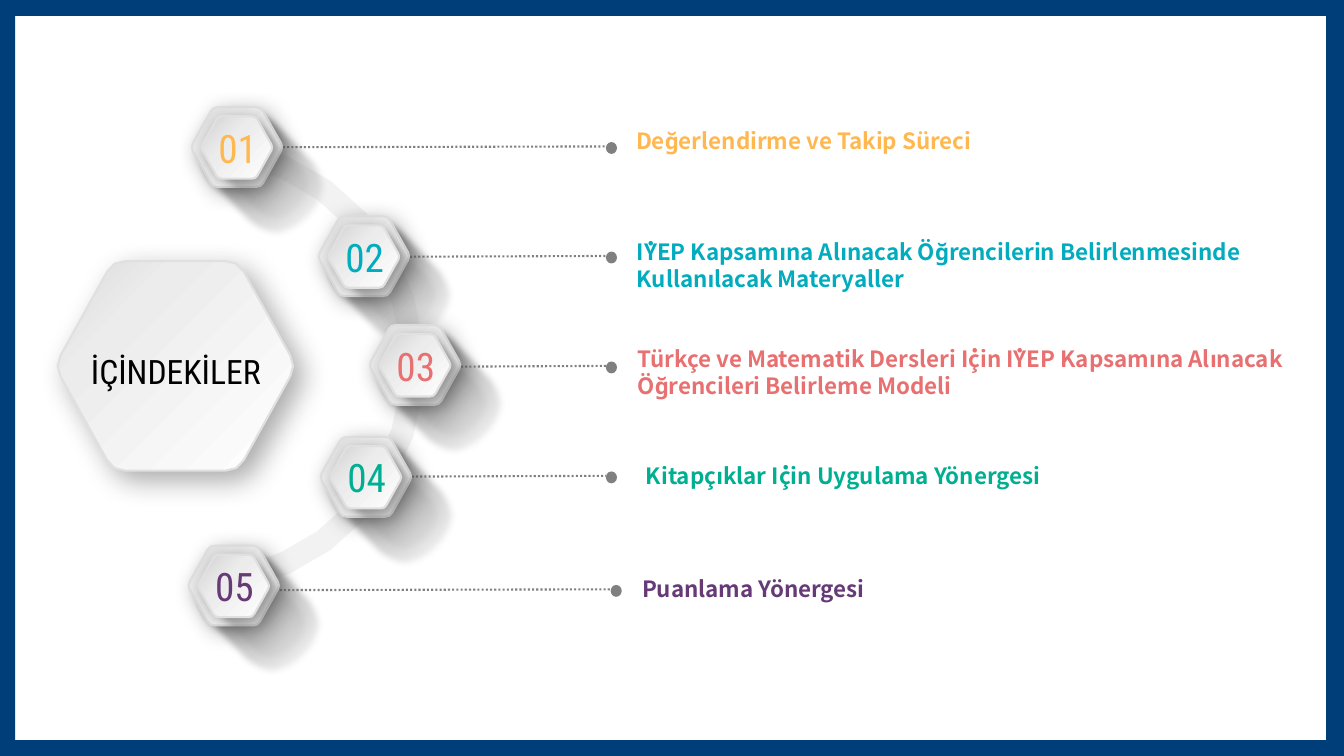
import math

import pptx
import pptx.dml.color
import pptx.enum.dml
import pptx.enum.shapes
import pptx.enum.text
import pptx.oxml
import pptx.oxml.ns
import pptx.util

Cm = pptx.util.Cm
RGBColor = pptx.dml.color.RGBColor
SHAPES = pptx.enum.shapes.MSO_SHAPE
ALIGN = pptx.enum.text.PP_ALIGN

NAVY = RGBColor(0x00, 0x3E, 0x7A)
BLACK = RGBColor(0x00, 0x00, 0x00)
GREY = RGBColor(0x80, 0x80, 0x80)
ARC_GREY = RGBColor(0xF2, 0xF2, 0xF2)
RIM_GREY = RGBColor(0xE0, 0xE0, 0xE0)
FADE_GREY = RGBColor(0xE8, 0xE8, 0xE8)
WHITE = RGBColor(0xFF, 0xFF, 0xFF)
LIGHT = RGBColor(0xEC, 0xEC, 0xEC)
SHADE = RGBColor(0xD9, 0xD9, 0xD9)
DEEP_SHADE = RGBColor(0xD1, 0xD1, 0xD1)
YELLOW = RGBColor(0xFF, 0xB8, 0x50)
TEAL = RGBColor(0x01, 0xAC, 0xBE)
CORAL = RGBColor(0xE8, 0x70, 0x71)
GREEN = RGBColor(0x00, 0xAF, 0x92)
PURPLE = RGBColor(0x66, 0x3A, 0x77)

NUMBER_FONT = "Roboto Condensed"
TOPIC_FONT = "Noto Sans CJK SC"
SLIDE_W, SLIDE_H = 33.87, 19.05
BADGE_W, BADGE_H = 2.28, 2.01
FACE_STOPS = [(0, WHITE, 100), (73, LIGHT, 100), (100, SHADE, 100)]
INNER_STOPS = [(0, WHITE, 100), (60, LIGHT, 100), (100, DEEP_SHADE, 100)]

# colour, badge (left, top), dot (left, centre), topic (left, top, width), lines, alignment
TOPICS = [
    (YELLOW, (4.83, 2.7), (15.27, 3.73), (15.78, 3.07, 9.25),
     ["Değerlendirme ve Takip Süreci"], ALIGN.LEFT),
    (TEAL, (8.03, 5.45), (15.27, 6.49), (15.8, 5.88, 16.15),
     ["İYEP Kapsamına Alınacak Öğrencilerin Belirlenmesinde",
      "Kullanılacak Materyaller"], ALIGN.LEFT),
    (CORAL, (9.32, 8.19), (15.27, 9.26), (15.82, 8.57, 17.81),
     ["Türkçe ve Matematik Dersleri İçin İYEP Kapsamına Alınacak",
      "Öğrencileri Belirleme Modeli"], ALIGN.LEFT),
    (GREEN, (8.08, 11.01), (15.27, 12.03), (15.74, 11.53, 11.02),
     ["Kitapçıklar İçin Uygulama Yönergesi"], ALIGN.CENTER),
    (PURPLE, (4.75, 13.75), (15.39, 14.89), (15.93, 14.38, 6.71),
     ["Puanlama Yönergesi"], ALIGN.LEFT),
]


def write_text(shape, lines, *, font, size, color, bold=False, align=ALIGN.LEFT):
    frame = shape.text_frame
    frame.word_wrap = True
    frame.auto_size = pptx.enum.text.MSO_AUTO_SIZE.NONE
    frame.text = "\n".join(lines)
    for paragraph in frame.paragraphs:
        paragraph.alignment = align
        style = paragraph.runs[0].font
        style.name, style.size, style.bold = font, pptx.util.Pt(size), bold
        style.color.rgb = color


def fill_plain(shape, color):
    shape.shadow.inherit = False
    shape.fill.solid()
    shape.fill.fore_color.rgb = color
    shape.line.fill.background()


def fill_gradient(shape, stops, angle):
    """Stops are (position %, colour, opacity %); the angle runs clockwise."""
    stop_xml = "".join(
        f'<a:gs pos="{position * 1000}"><a:srgbClr val="{color}">'
        f'<a:alpha val="{opacity * 1000}"/></a:srgbClr></a:gs>'
        for position, color, opacity in stops)
    shape.fill.gradient()
    properties = shape.element.spPr
    properties.replace(properties.find(pptx.oxml.ns.qn("a:gradFill")), pptx.oxml.parse_xml(
        f'<a:gradFill {pptx.oxml.ns.nsdecls("a")} rotWithShape="1"><a:gsLst>{stop_xml}</a:gsLst>'
        f'<a:lin ang="{angle * 60000}" scaled="0"/></a:gradFill>'))


def add_effect(shape, tag, attributes, content=""):
    shape.shadow.inherit = False
    effects = shape.element.spPr.find(pptx.oxml.ns.qn("a:effectLst"))
    effects.append(pptx.oxml.parse_xml(
        f'<a:{tag} {pptx.oxml.ns.nsdecls("a")} {attributes}>{content}</a:{tag}>'))


def add_outline(shapes, *contours):
    """Draw closed contours, given as points in centimetres, as one shape."""
    builder = None
    for contour in contours:
        points = [(Cm(x), Cm(y)) for x, y in contour]
        if builder is None:
            builder = shapes.build_freeform(*points[0], scale=1.0)
        else:
            builder.move_to(*points[0])
        builder.add_line_segments(points[1:], close=True)
    return builder.convert_to_shape()


def add_hexagon(shapes, left, top, width, height, stops, opacity, blur, distance):
    corners = [(-0.012, 0.5), (0.235, 0), (0.765, 0), (1.012, 0.5), (0.765, 1), (0.235, 1)]
    trim, steps = 0.1, 2
    points = []
    for i, (x, y) in enumerate(corners):
        (px, py), (nx, ny) = corners[i - 1], corners[(i + 1) % 6]
        for step in range(steps + 1):
            t = step / steps
            before, after = trim * (1 - t) ** 2, trim * t ** 2
            points.append((left + width * (x + before * (px - x) + after * (nx - x)),
                           top + height * (y + before * (py - y) + after * (ny - y))))
    hexagon = add_outline(shapes, points)
    hexagon.rotation = 180
    fill_gradient(hexagon, stops, 45)
    hexagon.line.color.rgb = RIM_GREY
    hexagon.line.width = pptx.util.Pt(1.5)
    add_effect(hexagon, "outerShdw",
               f'blurRad="{blur * 12700}" dist="{distance * 12700}" dir="2700000" '
               'algn="tl" rotWithShape="0"',
               f'<a:srgbClr val="{BLACK}"><a:alpha val="{opacity * 1000}"/></a:srgbClr>')


def add_long_shadow(shapes, left, top, width, height, opacity):
    shadow = shapes.add_shape(SHAPES.ROUNDED_RECTANGLE, Cm(left), Cm(top), Cm(width), Cm(height))
    shadow.adjustments[0] = 0.476
    shadow.rotation = 46
    fill_gradient(shadow, [(0, BLACK, opacity), (100, FADE_GREY, 0)], 0)
    shadow.line.fill.background()
    add_effect(shadow, "softEdge", 'rad="63500"')


def add_badge(slide, left, top, number, color):
    shapes = slide.shapes.add_group_shape().shapes
    add_long_shadow(shapes, left - 0.02, top + 0.33, 3.61, 2.62, 100)
    add_hexagon(shapes, left, top, BADGE_W, BADGE_H, FACE_STOPS, 32, 16, 5)
    add_long_shadow(shapes, left + 0.18, top + 0.58, 3.12, 2.03, 66)
    add_hexagon(shapes, left + 0.25, top + 0.23, 1.78, 1.57, INNER_STOPS, 33, 12, 3)
    label = shapes.add_textbox(Cm(left - 0.06), Cm(top + 0.3), Cm(2.44), Cm(1.45))
    write_text(label, [f"{number:02}"], font=NUMBER_FONT, size=28, color=color,
               align=ALIGN.CENTER)


def add_leader(slide, start, end, center):
    shapes = slide.shapes.add_group_shape().shapes
    line = shapes.add_connector(pptx.enum.shapes.MSO_CONNECTOR.STRAIGHT,
                                Cm(start), Cm(center - 0.02), Cm(end), Cm(center - 0.04))
    line.line.color.rgb = GREY
    line.line.width = pptx.util.Pt(1.5)
    line.line.dash_style = pptx.enum.dml.MSO_LINE.ROUND_DOT
    line.element.spPr.append(pptx.oxml.parse_xml(
        f'<a:effectLst {pptx.oxml.ns.nsdecls("a")}/>'))
    dot = shapes.add_shape(SHAPES.OVAL, Cm(end), Cm(center - 0.15), Cm(0.28), Cm(0.3))
    fill_plain(dot, GREY)


def add_arc(slide, left, middle, outer, inner):
    angles = [math.radians(degree) for degree in range(-90, 91, 12)]
    edge = [(left + outer * math.cos(a), middle + outer * math.sin(a)) for a in angles]
    edge += [(left + inner * math.cos(a), middle + inner * math.sin(a)) for a in angles[::-1]]
    fill_plain(add_outline(slide.shapes, edge), ARC_GREY)


def add_title(slide, left, top, width, height):
    add_hexagon(slide.shapes, left, top, width, height, FACE_STOPS, 32, 20, 9)
    title = slide.shapes.title
    title.element.getparent().append(title.element)
    title.left, title.top = Cm(left + 0.49), Cm(top + 2.14)
    title.width, title.height = Cm(width - 0.96), Cm(1.27)
    write_text(title, ["İÇİNDEKİLER"], font=NUMBER_FONT, size=24, color=BLACK,
               align=ALIGN.CENTER)


def add_topic(slide, left, top, width, lines, color, align):
    topic = slide.shapes.add_textbox(Cm(left), Cm(top), Cm(width), Cm(0.25 + 0.69 * len(lines)))
    write_text(topic, lines, font=TOPIC_FONT, size=16, color=color, bold=True, align=align)


def add_frame(slide, left, top, right, bottom):
    """The arguments are the thickness of each side."""
    outer = [(0, 0), (SLIDE_W, 0), (SLIDE_W, SLIDE_H), (0, SLIDE_H)]
    inner = [(left, top), (left, SLIDE_H - bottom),
             (SLIDE_W - right, SLIDE_H - bottom), (SLIDE_W - right, top)]
    fill_plain(add_outline(slide.shapes, outer, inner), NAVY)


def main():
    deck = pptx.Presentation()
    deck.slide_width, deck.slide_height = Cm(SLIDE_W), Cm(SLIDE_H)
    slide = deck.slides.add_slide(deck.slide_layouts.get_by_name("Title Only"))
    add_arc(slide, 4.95, 9.21, 5.75, 5.17)
    for color, (left, top), (dot_left, dot_center), box, lines, align in TOPICS:
        add_leader(slide, left + BADGE_W - 0.3, dot_left, dot_center)
    for number, (color, (left, top), dot, box, lines, align) in enumerate(TOPICS, 1):
        add_badge(slide, left, top, number, color)
    add_title(slide, 1.45, 6.58, 5.94, 5.28)
    for color, badge, dot, box, lines, align in TOPICS:
        add_topic(slide, *box, lines, color, align)
    add_frame(slide, 0.38, 0.4, 0.45, 0.4)
    deck.save("out.pptx")


if __name__ == "__main__":
    main()
